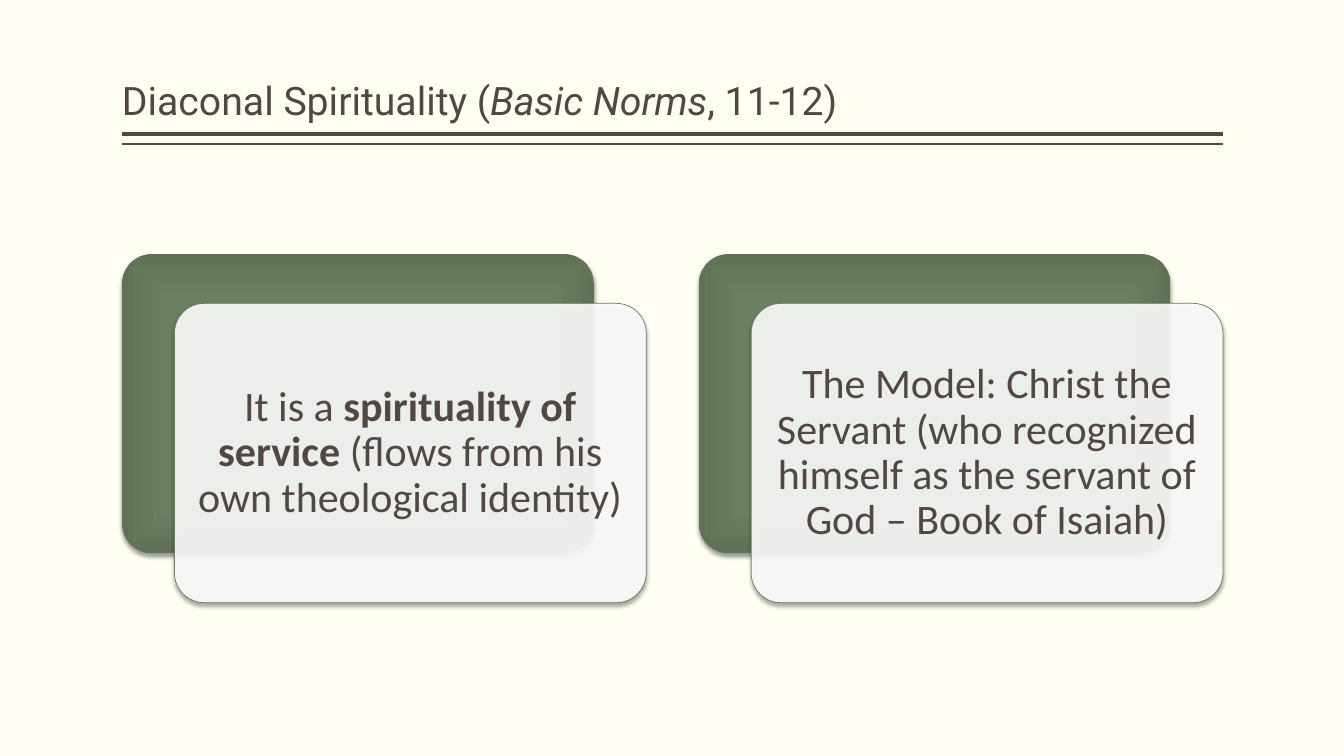
from dataclasses import dataclass

from pptx import Presentation
from pptx.dml.color import RGBColor
from pptx.enum.shapes import MSO_CONNECTOR, MSO_SHAPE
from pptx.enum.text import MSO_ANCHOR, PP_ALIGN
from pptx.oxml import parse_xml
from pptx.oxml.ns import nsdecls, qn
from pptx.util import Pt

LINE = MSO_CONNECTOR.STRAIGHT
ROUND = MSO_SHAPE.ROUNDED_RECTANGLE
MIDDLE, BOTTOM = MSO_ANCHOR.MIDDLE, MSO_ANCHOR.BOTTOM
LEFT, CENTER = PP_ALIGN.LEFT, PP_ALIGN.CENTER


@dataclass(frozen=True)
class Theme:
    """Hold the colours, fonts and type sizes."""
    paper: str = "FFFFF3"
    ink: str = "514843"
    card: str = "FFFFFF"
    edge: str = "6D7D66"
    greens: tuple = ((0, "6B8162"), (71, "6A8061"), (100, "5F7256"))
    head: str = "Roboto"
    body: str = "Calibri"
    title: int = 28
    text: int = 30


THEME = Theme()
SCALE = 9144
START, END = 121, 1213
TOP, WIDE, HIGH = 252, 468, 297
PITCH, SHIFT, DROP, INSET = 572, 52, 49, 9
CARDS = (
    (("It is a ", ""), ("spirituality of service ", "b"),
     ("(flows from his own theological identity)", "")),
    (("The Model: Christ the Servant (who recognized himself as the "
      "servant of God – Book of Isaiah)", ""),),
)


def px(*sizes):
    """Turn px lengths into EMU."""
    return [size * SCALE for size in sizes]


def rgb(code):
    """Turn a hex code into a colour."""
    return RGBColor.from_string(code)


def add_rule(slide, y, width):
    """Draw one line under the title."""
    rule = slide.shapes.add_connector(LINE, *px(START, y, END, y))
    rule.line.color.rgb = rgb(THEME.ink)
    rule.line.width = Pt(width)
    rule._element.spPr.append(parse_xml(f"<a:effectLst {nsdecls('a')}/>"))


def add_text(slide, box, runs, font, size, anchor, align, pads):
    """Add a text box whose runs may be bold or italic."""
    frame = slide.shapes.add_textbox(*px(*box)).text_frame
    frame.word_wrap = True
    frame.vertical_anchor = anchor
    side, edge = px(*pads)
    frame.margin_left = frame.margin_right = side
    frame.margin_top = frame.margin_bottom = edge
    para = frame.paragraphs[0]
    para.alignment = align
    para.line_spacing = 0.9
    for words, style in runs:
        run = para.add_run()
        run.text = words
        run.font.name = font
        run.font.size = Pt(size)
        run.font.bold = style == "b"
        run.font.italic = style == "i"
        run.font.color.rgb = rgb(THEME.ink)


def add_panel(slide, x, y):
    """Add a rounded panel with a soft shadow below it."""
    panel = slide.shapes.add_shape(ROUND, *px(x, y, WIDE, HIGH))
    panel.adjustments[0] = 0.1
    panel.shadow.inherit = False
    shade = parse_xml(
        f'<a:outerShdw {nsdecls("a")} blurRad="{Pt(3.1)}" dist="{Pt(2)}" '
        'dir="5400000" rotWithShape="0"><a:srgbClr val="000000">'
        '<a:alpha val="38000"/></a:srgbClr></a:outerShdw>')
    panel._element.spPr.find(qn("a:effectLst")).append(shade)
    return panel


def fill_green(panel):
    """Give a panel the green gradient that darkens to its edges."""
    panel.line.fill.background()
    panel.fill.background()
    stops = "".join(
        f'<a:gs pos="{at * 1000}"><a:srgbClr val="{code}"/></a:gs>'
        for at, code in THEME.greens)
    blend = parse_xml(
        f'<a:gradFill {nsdecls("a")} rotWithShape="1"><a:gsLst>{stops}'
        '</a:gsLst><a:path path="rect"><a:fillToRect l="50000" t="50000" '
        'r="50000" b="50000"/></a:path></a:gradFill>')
    props = panel._element.spPr
    props.replace(props.find(qn("a:noFill")), blend)


def fill_white(panel):
    """Give a panel the clear white fill and thin green edge."""
    panel.fill.solid()
    panel.fill.fore_color.rgb = rgb(THEME.card)
    tint = panel._element.spPr.find(qn("a:solidFill"))[0]
    tint.append(parse_xml(f'<a:alpha {nsdecls("a")} val="90000"/>'))
    panel.line.color.rgb = rgb(THEME.edge)
    panel.line.width = Pt(0.5)


def add_card(slide, x, runs):
    """Add a green panel with a white text card over it."""
    fill_green(add_panel(slide, x, TOP))
    left, top = x + SHIFT, TOP + DROP
    fill_white(add_panel(slide, left, top))
    box = (left + INSET, top + INSET, WIDE - 2 * INSET, HIGH - 2 * INSET)
    add_text(slide, box, runs, THEME.body, THEME.text, MIDDLE, CENTER, (12, 12))


def main():
    """Build the slide and save it."""
    deck = Presentation()
    deck.slide_width, deck.slide_height = px(1333, 750)
    slide = deck.slides.add_slide(deck.slide_layouts[6])
    slide.background.fill.solid()
    slide.background.fill.fore_color.rgb = rgb(THEME.paper)
    add_rule(slide, 133, 3)
    add_rule(slide, 143, 1)
    title = (("Diaconal Spirituality (", ""), ("Basic Norms", "i"),
             (", 11-12)", ""))
    add_text(slide, (START, 8, END - START, 120), title, THEME.head,
             THEME.title, BOTTOM, LEFT, (0, 5))
    for index, runs in enumerate(CARDS):
        add_card(slide, START + index * PITCH, runs)
    deck.save("out.pptx")


if __name__ == "__main__":
    main()
